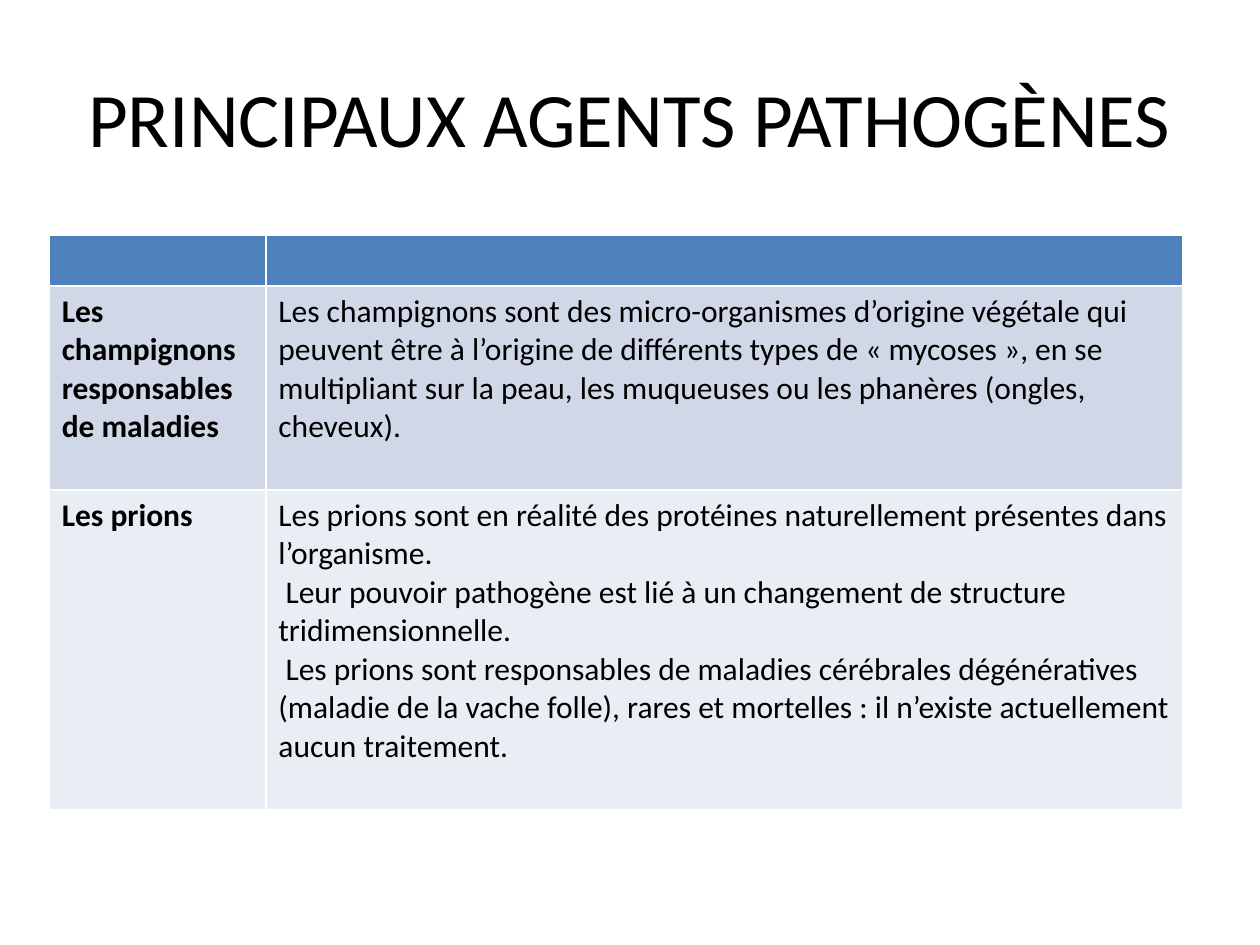
"""Build a slide with a table of the main pathogenic agents."""
from pptx import Presentation
from pptx.dml.color import RGBColor
from pptx.enum.text import MSO_ANCHOR, PP_ALIGN
from pptx.util import Inches, Pt

TITLE = "PRINCIPAUX AGENTS PATHOGÈNES"
AGENTS = [
    ("Les champignons responsables de maladies", [
        "Les champignons sont des micro-organismes d’origine végétale qui peuvent être "
        "à l’origine de différents types de « mycoses », en se multipliant sur la peau, "
        "les muqueuses ou les phanères (ongles, cheveux).",
    ]),
    ("Les prions", [
        "Les prions sont en réalité des protéines naturellement présentes dans l’organisme.",
        " Leur pouvoir pathogène est lié à un changement de structure tridimensionnelle.",
        " Les prions sont responsables de maladies cérébrales dégénératives (maladie de la "
        "vache folle), rares et mortelles : il n’existe actuellement aucun traitement.",
    ]),
]
FONT = "Calibri"
BLACK = RGBColor(0x00, 0x00, 0x00)
HEADER_BLUE = RGBColor(0x4F, 0x81, 0xBD)
DARK_BAND = RGBColor(0xD0, 0xD8, 0xE8)
LIGHT_BAND = RGBColor(0xE9, 0xED, 0xF4)
ROW_FILLS = [HEADER_BLUE, DARK_BAND, LIGHT_BAND]
COLUMN_WIDTHS = [1.72, 7.28]
ROW_HEIGHTS = [0.4, 1.62, 2.54]


def write_paragraphs(text_frame, texts, size, bold=False, alignment=PP_ALIGN.LEFT):
    text_frame.text = "\n".join(texts)
    for paragraph in text_frame.paragraphs:
        paragraph.alignment = alignment
        paragraph.font.name = FONT
        paragraph.font.size = Pt(size)
        paragraph.font.bold = bold
        paragraph.font.color.rgb = BLACK


def add_title(slide):
    title = slide.shapes.add_textbox(Inches(0.5), Inches(0.3), Inches(9), Inches(1.25))
    title.text_frame.word_wrap = True
    title.text_frame.vertical_anchor = MSO_ANCHOR.MIDDLE
    write_paragraphs(title.text_frame, [TITLE], 44, alignment=PP_ALIGN.CENTER)


def add_agents_table(slide):
    table = slide.shapes.add_table(
        len(ROW_HEIGHTS), len(COLUMN_WIDTHS), Inches(0.39), Inches(1.87),
        Inches(sum(COLUMN_WIDTHS)), Inches(sum(ROW_HEIGHTS))).table
    for column, width in zip(table.columns, COLUMN_WIDTHS):
        column.width = Inches(width)
    for row, height, fill in zip(table.rows, ROW_HEIGHTS, ROW_FILLS):
        row.height = Inches(height)
        for cell in row.cells:
            cell.fill.solid()
            cell.fill.fore_color.rgb = fill
    for row_index, (agent, description) in enumerate(AGENTS, start=1):
        write_paragraphs(table.cell(row_index, 0).text_frame, [agent], 18, bold=True)
        write_paragraphs(table.cell(row_index, 1).text_frame, description, 18)


def main():
    presentation = Presentation()
    presentation.slide_width = Inches(10)
    presentation.slide_height = Inches(7.5)
    slide = presentation.slides.add_slide(presentation.slide_layouts[6])
    add_title(slide)
    add_agents_table(slide)
    presentation.save("out.pptx")


if __name__ == "__main__":
    main()
